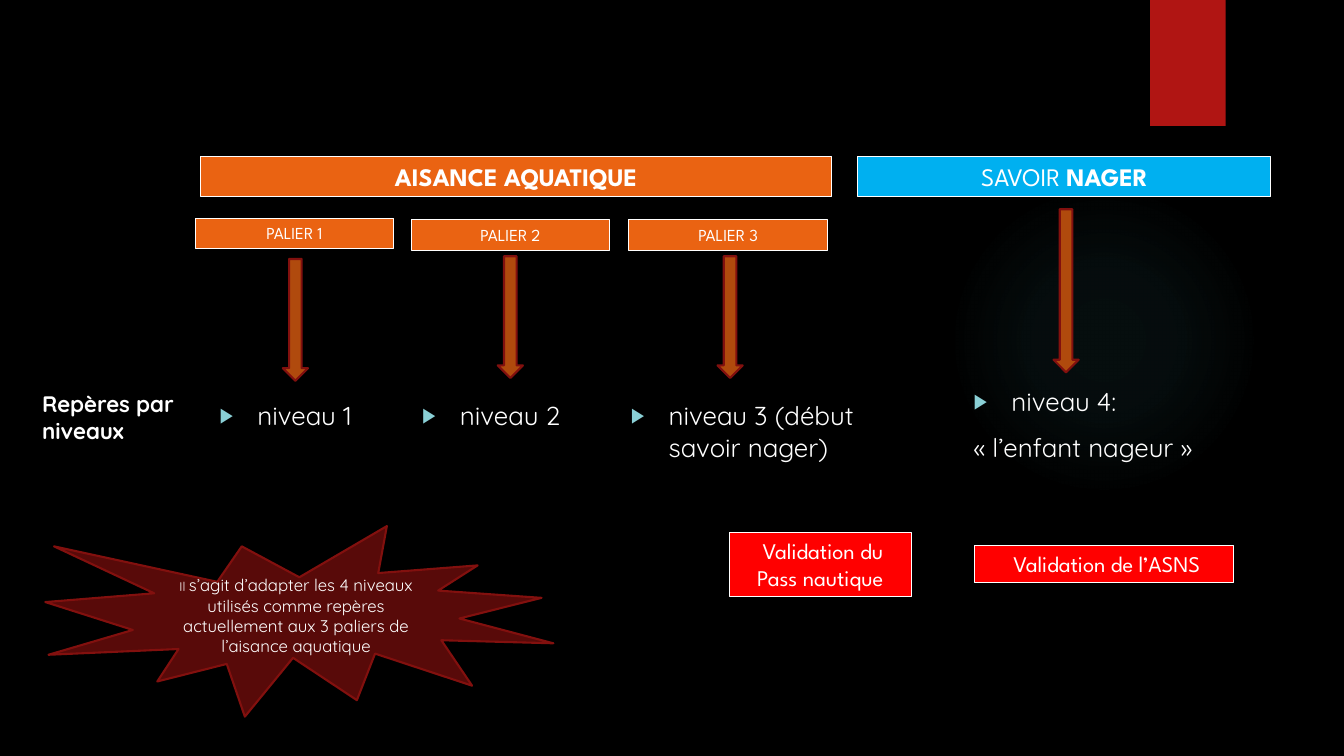
from lxml import etree
from pptx import Presentation
from pptx.dml.color import RGBColor
from pptx.enum import shapes, text
from pptx.oxml import ns
from pptx.util import Pt

HEADING, BODY = "League Spartan", "Quicksand"
WHITE, ORANGE, BLUE, RED = "FFFFFF", "EA6312", "00B0F0", "FF0000"
BROWN, DARK_RED, GLOW, BULLET = "B04A0D", "82100E", "50B9C1", "8AD0D6"

# Boxes are (left, top, width, height) in points; runs are (text, size, bold).
LABELS = [
    ((143.3, 111.6, 450.7, 28.8), ORANGE, [("AISANCE AQUATIQUE", 18, True)]),
    ((612.7, 111.6, 295.2, 28.8), BLUE, [("SAVOIR ", 18, False), ("NAGER", 18, True)]),
    ((139.5, 155.8, 141.8, 21.8), ORANGE, [("PALIER 1", 12, False)]),
    ((293.8, 156.8, 141.8, 21.8), ORANGE, [("PALIER 2", 12, False)]),
    ((449.3, 156.8, 141.8, 21.8), ORANGE, [("PALIER 3", 12, False)]),
    ((521, 380.2, 129.8, 46), RED, [(" Validation du Pass nautique", 16, False)]),
    ((696, 389.5, 185.3, 26.6), RED, [(" Validation de l’ASNS", 16, False)]),
]
ARROW_WIDTH = 18
ARROWS = [(202, 185, 87), (355.5, 183, 87), (512.5, 183, 87), (752.5, 149.5, 116.5)]
LEVELS = [
    ((149.8, 282.2, 122.4, 29), ["niveau 1"]),
    ((294.5, 282.2, 122.4, 29), ["niveau 2"]),
    ((443.5, 282.2, 195, 45), ["niveau 3 (début savoir nager)"]),
    ((688.3, 272.2, 193, 72), ["niveau 4:", "« l’enfant nageur »"]),
]
ROW_TITLE = ((23, 275, 115.2, 52.6), [("Repères par niveaux", 16, True)])
BURST = ((32.4, 375.8, 362.9, 136.1), [
    ("Il ", 9, False),
    ("s’agit d’adapter les 4 niveaux utilisés comme repères actuellement "
     "aux 3 paliers de l’aisance aquatique", 12, False),
])
GLOW_BOX, GLOW_STOPS = (677.5, 131.8, 221.8, 221.8), [(0, 7), (36, 6), (69, 0)]
RIBBON_BOX = (821.5, 0, 54, 90)


def colour(value):
    return RGBColor.from_string(value)


def add_child(parent, tag, **attributes):
    return etree.SubElement(parent, ns.qn(tag), attributes)


def add_figure(slide, kind, box, fill, line=None, line_width=0.75):
    figure = slide.shapes.add_shape(kind, *map(Pt, box))
    figure.shadow.inherit = False
    figure.fill.solid()
    figure.fill.fore_color.rgb = colour(fill)
    if line:
        figure.line.color.rgb = colour(line)
        figure.line.width = Pt(line_width)
    else:
        figure.line.fill.background()
    return figure


def add_text_box(slide, box):
    frame = slide.shapes.add_textbox(*map(Pt, box)).text_frame
    frame.word_wrap = True
    return frame


def write_runs(para, runs, font, align=text.PP_ALIGN.LEFT):
    para.alignment = align
    for words, size, bold in runs:
        span = para.add_run()
        span.text = words
        span.font.name = font
        span.font.size = Pt(size)
        span.font.bold = bold
        span.font.color.rgb = colour(WHITE)


def add_bullet(para):
    properties = para._p.get_or_add_pPr()
    properties.set("marL", str(Pt(27)))
    properties.set("indent", str(-Pt(27)))
    add_child(add_child(properties, "a:buClr"), "a:srgbClr", val=BULLET)
    add_child(properties, "a:buSzPct", val="80000")
    add_child(properties, "a:buFont", typeface="Arial")
    add_child(properties, "a:buChar", char="▶")


def add_glow(slide):
    """Draw the faint circle that fades out from its centre."""
    glow = add_figure(slide, shapes.MSO_SHAPE.OVAL, GLOW_BOX, GLOW)
    solid = glow._element.spPr.find(ns.qn("a:solidFill"))
    gradient = etree.Element(ns.qn("a:gradFill"), rotWithShape="1")
    stops = add_child(gradient, "a:gsLst")
    for position, opacity in GLOW_STOPS:
        stop = add_child(stops, "a:gs", pos=str(position * 1000))
        tint = add_child(stop, "a:srgbClr", val=GLOW)
        add_child(tint, "a:alpha", val=str(opacity * 1000))
    shade = add_child(gradient, "a:path", path="circle")
    add_child(shade, "a:fillToRect", l="50000", t="50000", r="50000", b="50000")
    solid.getparent().replace(solid, gradient)


def main():
    deck = Presentation()
    deck.slide_width, deck.slide_height = Pt(960), Pt(540)
    slide = deck.slides.add_slide(deck.slide_layouts[6])
    slide.background.fill.solid()
    slide.background.fill.fore_color.rgb = colour("000000")

    add_glow(slide)
    add_figure(slide, shapes.MSO_SHAPE.RECTANGLE, RIBBON_BOX, "B01513")

    box, runs = ROW_TITLE
    write_runs(add_text_box(slide, box).paragraphs[0], runs, BODY)

    for box, fill, runs in LABELS:
        label = add_figure(slide, shapes.MSO_SHAPE.RECTANGLE, box, fill, WHITE)
        label.text_frame.vertical_anchor = text.MSO_ANCHOR.TOP
        write_runs(label.text_frame.paragraphs[0], runs, HEADING, text.PP_ALIGN.CENTER)

    for left, top, height in ARROWS:
        add_figure(slide, shapes.MSO_SHAPE.DOWN_ARROW, (left, top, ARROW_WIDTH, height),
                   BROWN, DARK_RED, 1.5)

    for box, lines in LEVELS:
        frame = add_text_box(slide, box)
        for number, words in enumerate(lines):
            if number == 0:
                para = frame.paragraphs[0]
                add_bullet(para)
            else:
                para = frame.add_paragraph()
                para.space_before = Pt(10)
            write_runs(para, [(words, 18.5, False)], BODY)

    box, runs = BURST
    burst = add_figure(slide, shapes.MSO_SHAPE.EXPLOSION1, box, "580A09", DARK_RED, 1.5)
    write_runs(burst.text_frame.paragraphs[0], runs, BODY, text.PP_ALIGN.CENTER)

    deck.save("out.pptx")


if __name__ == "__main__":
    main()
